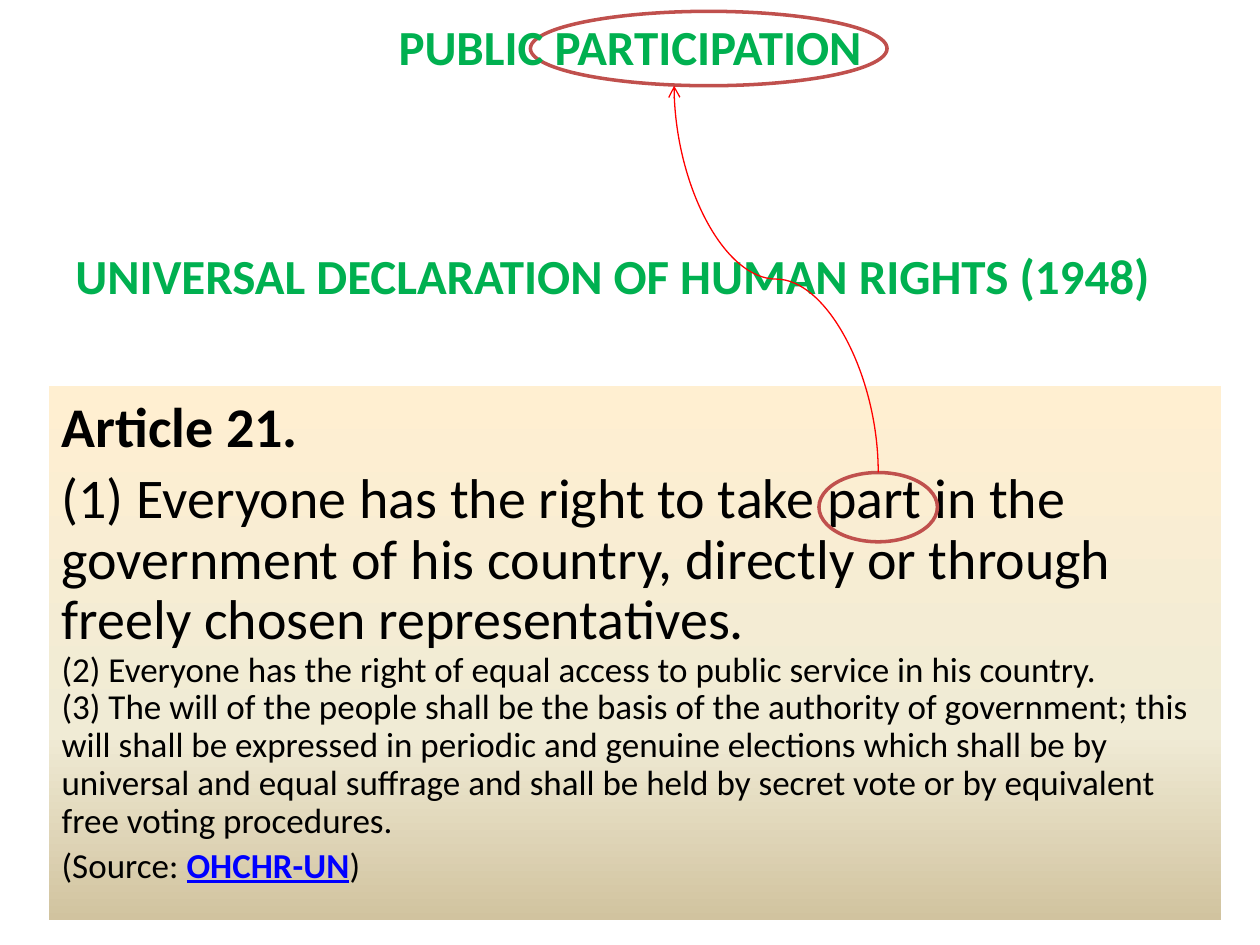
from copy import deepcopy
from dataclasses import dataclass
from typing import Optional

from lxml.etree import SubElement
from pptx import Presentation
from pptx.dml.color import RGBColor
from pptx.enum.shapes import MSO_CONNECTOR as Conn, MSO_SHAPE as Kind
from pptx.enum.text import MSO_ANCHOR as Anchor, MSO_AUTO_SIZE as Fit, PP_ALIGN as Align
from pptx.oxml.ns import qn
from pptx.util import Pt

COLORS = {"head": "00B050", "text": "000000", "link": "0000FF",
          "ring": "C0504D", "arrow": "FF0000"}
SHADES = [(0, "FFEFD1"), (0.65, "F0EBD5"), (1, "D1C39F")]


@dataclass
class Box:
    left: float
    top: float
    width: float
    height: float

    def place(self) -> tuple:
        return Pt(self.left), Pt(self.top), Pt(self.width), Pt(self.height)


@dataclass
class Span:
    text: str
    size: float
    bold: bool = False
    color: str = "text"
    under: bool = False
    wrap: bool = False  # a line break follows


@dataclass
class Para:
    spans: list
    line: Optional[float] = 0.9
    indent: float = 0
    align: Align = Align.LEFT


TITLE = Box(36, 9.4, 648, 80)
HEAD = Box(36, 140.4, 648, 80)
BODY = Box(28, 220.3, 669.6, 305.3)
WORD_RING = Box(468, 270, 67.7, 39.6)
TITLE_RING = Box(303.1, 6.5, 203.8, 42.5)
ARROW_END = (385.2, 49)

ARTICLE = [
    Para([Span("Article 21.", 32, bold=True)], line=None),
    Para([
        Span("(1) Everyone has the right to take part in the government of his country, "
             "directly or through freely chosen representatives.", 32, wrap=True),
        Span("(2) Everyone has the right of equal access to public service in his country.",
             20, wrap=True),
        Span("(3) The will of the people shall be the basis of the authority of government; "
             "this will shall be expressed in periodic and genuine elections which shall be "
             "by universal and equal suffrage and shall be held by secret vote or by "
             "equivalent free voting procedures.", 20),
    ]),
    Para([Span("(Source: ", 20), Span("OHCHR-UN", 20, True, "link", True), Span(")", 20)],
         indent=27),
]


def rgb(name: str) -> RGBColor:
    return RGBColor.from_string(COLORS[name])


def write(shape, paras: list) -> None:
    frame = shape.text_frame
    frame.word_wrap = True
    frame.auto_size = Fit.NONE
    frame.vertical_anchor = Anchor.TOP
    for i, para in enumerate(paras):
        p = frame.add_paragraph() if i else frame.paragraphs[0]
        p.alignment = para.align
        p.space_before = Pt(0.2 * para.spans[0].size)
        if para.line:
            p.line_spacing = para.line
        props = p._p.get_or_add_pPr()
        props.set("marL", str(Pt(para.indent)))
        props.set("indent", str(-Pt(para.indent)))
        SubElement(props, qn("a:buNone"))
        for span in para.spans:
            run = p.add_run()
            run.text = span.text
            font = run.font
            font.name, font.size, font.bold = "Calibri", Pt(span.size), span.bold
            font.underline = span.under
            font.color.rgb = rgb(span.color)
            if span.wrap:
                p.add_line_break()
                SubElement(p._p[-1], qn("a:rPr")).set("sz", str(span.size * 100))


def shade(shape) -> None:
    """Fill from top to bottom with the three shades."""
    fill = shape.fill
    fill.gradient()
    fill.gradient_angle = 270
    stops = shape.element.spPr.find(".//" + qn("a:gsLst"))
    stops.insert(1, deepcopy(stops[0]))
    for stop, (pos, color) in zip(fill.gradient_stops, SHADES):
        stop.position = pos
        stop.color.rgb = RGBColor.from_string(color)


def ring(slide, box: Box) -> None:
    oval = slide.shapes.add_shape(Kind.OVAL, *box.place())
    oval.shadow.inherit = False
    oval.fill.background()
    oval.line.color.rgb = rgb("ring")
    oval.line.width = Pt(2)


def rise(slide, start: tuple, end: tuple) -> None:
    """Draw a curved arrow that leaves and arrives vertically, by a quarter turn."""
    mid_x, mid_y = (start[0] + end[0]) / 2, (start[1] + end[1]) / 2
    half_w, half_h = (start[1] - end[1]) / 2, (start[0] - end[0]) / 2
    curve = slide.shapes.add_connector(
        Conn.CURVE, Pt(mid_x - half_w), Pt(mid_y + half_h),
        Pt(mid_x + half_w), Pt(mid_y - half_h))
    curve.line.color.rgb = rgb("arrow")
    curve.line.width = Pt(0.75)
    props = curve.element.spPr
    props.find(qn("a:xfrm")).set("rot", str(270 * 60000))
    SubElement(props.find(qn("a:ln")), qn("a:tailEnd")).set("type", "arrow")
    SubElement(props, qn("a:effectLst"))


def main() -> None:
    deck = Presentation()
    deck.slide_width, deck.slide_height = Pt(720), Pt(540)
    slide = deck.slides.add_slide(deck.slide_layouts[1])
    title, body = slide.shapes.title, slide.placeholders[1]
    for shape, box in ((title, TITLE), (body, BODY)):
        shape.left, shape.top, shape.width, shape.height = box.place()

    head = slide.shapes.add_textbox(*HEAD.place())
    write(head, [Para([Span("UNIVERSAL DECLARATION OF HUMAN RIGHTS (1948)",
                            28, True, "head")])])
    shade(body)
    write(body, ARTICLE)
    ring(slide, WORD_RING)
    ring(slide, TITLE_RING)
    rise(slide, (WORD_RING.left + WORD_RING.width / 2, WORD_RING.top), ARROW_END)
    write(title, [Para([Span("PUBLIC PARTICIPATION", 28, True, "head")],
                       align=Align.CENTER)])
    slide.shapes.element.append(title.element)  # bring to front
    deck.save("out.pptx")


if __name__ == "__main__":
    main()
